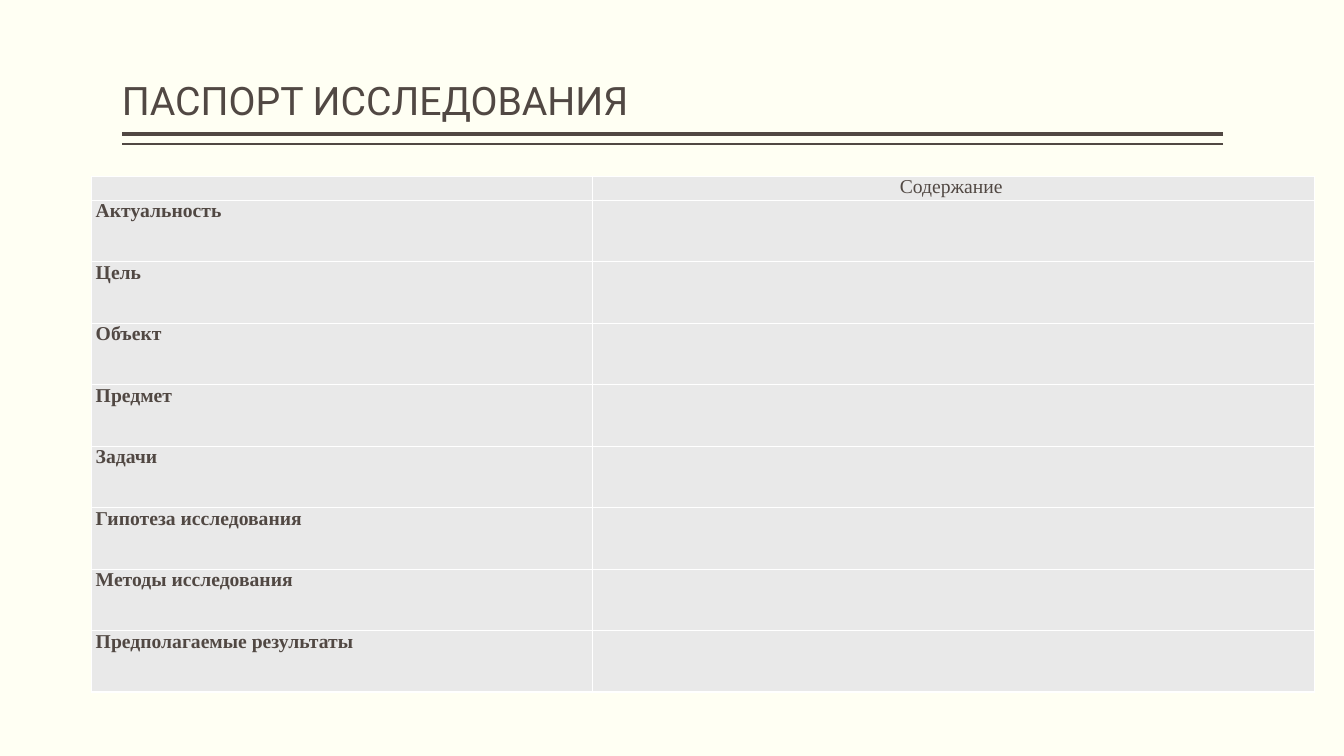
from lxml.etree import SubElement
from pptx import Presentation
from pptx.dml.color import RGBColor
from pptx.enum.shapes import MSO_CONNECTOR
from pptx.enum.text import MSO_ANCHOR, PP_ALIGN
from pptx.oxml.ns import qn
from pptx.util import Inches, Pt

INK, PAPER, CELL, BORDER = "514843", "FFFFF3", "E9E9E9", "FFFFFF"
TABLE_SIZE = 14
COLUMN_WIDTHS = (4.97, 7.16)
HEADER_HEIGHT, ROW_HEIGHT = 0.21, 0.61
HEADER = ("", "Содержание ")
TOPICS = (
    "Актуальность", "Цель", "Объект", "Предмет", "Задачи",
    "Гипотеза исследования", "Методы исследования", "Предполагаемые результаты",
)


def rgb(color):
    return RGBColor.from_string(color)


def write(tf, text, size, font, color=INK, bold=False, align=PP_ALIGN.LEFT, spacing=1.0):
    p = tf.paragraphs[0]
    p.alignment, p.line_spacing = align, spacing
    if not text:
        SubElement(p._p, qn("a:endParaRPr"), sz=str(size * 100))
        return
    r = p.add_run()
    r.text = text
    r.font.size, r.font.name, r.font.bold = Pt(size), font, bold
    r.font.color.rgb = rgb(color)


def add_rule(slide, left, top, width, weight):
    line = slide.shapes.add_connector(
        MSO_CONNECTOR.STRAIGHT, Inches(left + width), Inches(top), Inches(left), Inches(top))
    line.line.color.rgb = rgb(INK)
    line.line.width = Pt(weight)
    SubElement(line._element.spPr, qn("a:effectLst"))


def add_heading(slide, text, left, top, width, height):
    """Place the title with a thick and a thin rule below it."""
    for gap, weight in ((0.05, 3), (0.15, 1)):
        add_rule(slide, left, top + height + gap, width, weight)
    title = slide.shapes.title
    title.left, title.top = Inches(left), Inches(top)
    title.width, title.height = Inches(width), Inches(height)
    tf = title.text_frame
    tf.word_wrap = True
    tf.vertical_anchor = MSO_ANCHOR.BOTTOM
    tf.margin_left = tf.margin_right = 0
    tf.margin_top = tf.margin_bottom = Inches(0.05)
    write(tf, text, 28, "Roboto", spacing=0.9)


def format_cell(cell):
    cell.margin_left = cell.margin_right = Inches(0.04)
    cell.margin_top = cell.margin_bottom = 0
    tc_pr = cell._tc.get_or_add_tcPr()
    for side in ("lnL", "lnR", "lnT", "lnB"):
        ln = SubElement(tc_pr, qn(f"a:{side}"), w=str(Pt(1)))
        SubElement(SubElement(ln, qn("a:solidFill")), qn("a:srgbClr"), val=BORDER)
    cell.fill.solid()
    cell.fill.fore_color.rgb = rgb(CELL)


def add_passport_table(slide, left, top):
    rows = [HEADER] + [(topic, "") for topic in TOPICS]
    height = HEADER_HEIGHT + ROW_HEIGHT * len(TOPICS)
    table = slide.shapes.add_table(
        len(rows), len(COLUMN_WIDTHS), Inches(left), Inches(top),
        Inches(sum(COLUMN_WIDTHS)), Inches(height)).table
    table.first_row = table.horz_banding = False
    for column, width in zip(table.columns, COLUMN_WIDTHS):
        column.width = Inches(width)
    for i, texts in enumerate(rows):
        table.rows[i].height = Inches(ROW_HEIGHT if i else HEADER_HEIGHT)
        for j, text in enumerate(texts):
            cell = table.cell(i, j)
            format_cell(cell)
            write(cell.text_frame, text, TABLE_SIZE, "Times New Roman", bold=i > 0,
                  align=PP_ALIGN.LEFT if i else PP_ALIGN.CENTER)


def main():
    prs = Presentation()
    prs.slide_width, prs.slide_height = Inches(13.33), Inches(7.5)
    slide = prs.slides.add_slide(prs.slide_layouts[5])
    slide.background.fill.solid()
    slide.background.fill.fore_color.rgb = rgb(PAPER)
    add_heading(slide, "ПАСПОРТ ИССЛЕДОВАНИЯ", 1.21, 0.08, 10.92, 1.2)
    add_passport_table(slide, 0.91, 1.75)
    prs.save("out.pptx")


if __name__ == "__main__":
    main()
